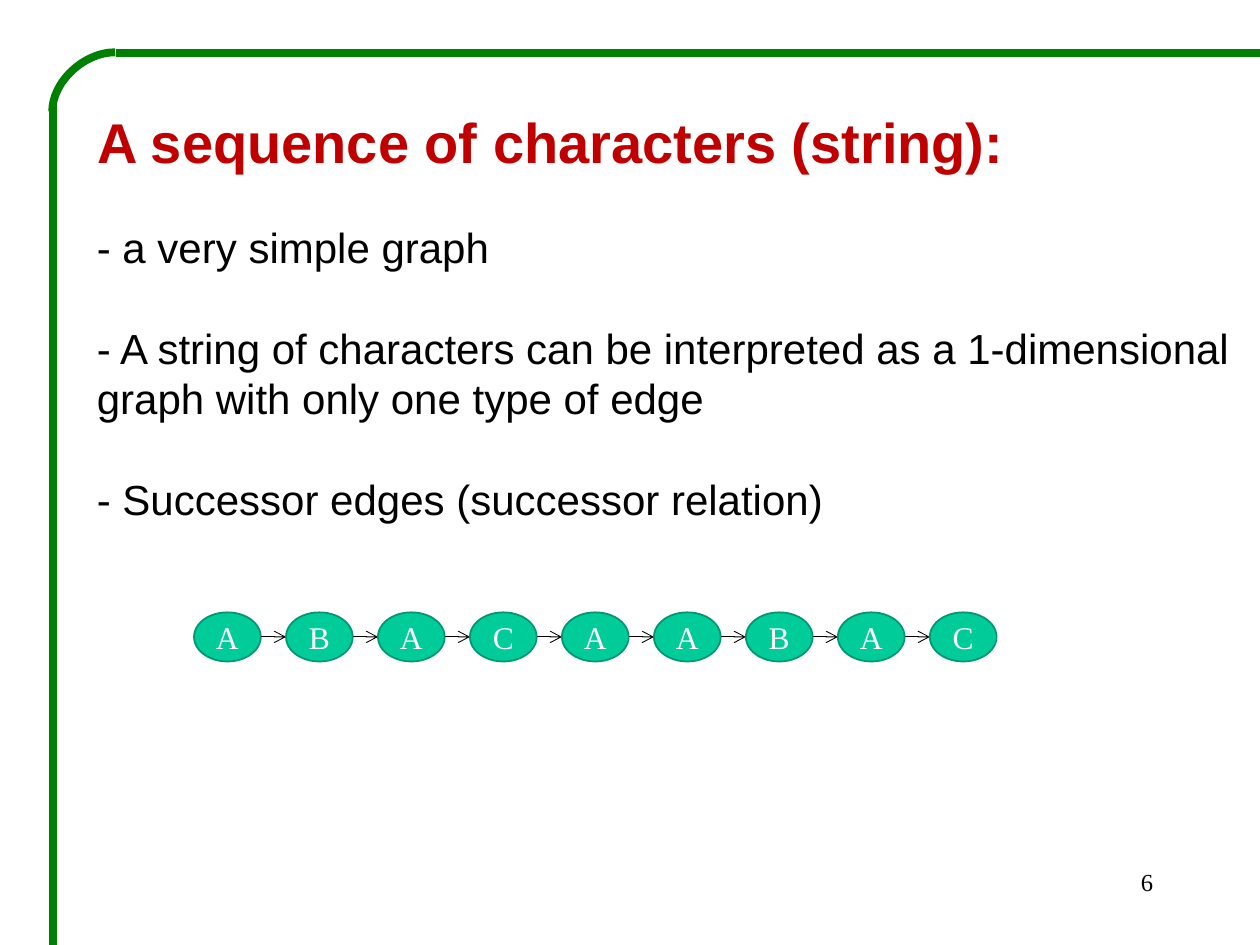
from lxml import etree
from pptx import Presentation
from pptx.dml.color import RGBColor
from pptx.enum.shapes import MSO_CONNECTOR, MSO_SHAPE
from pptx.enum.text import MSO_ANCHOR, PP_ALIGN
from pptx.oxml.ns import qn
from pptx.util import Inches, Pt

OVAL = MSO_SHAPE.OVAL
LINE, CURVE = MSO_CONNECTOR.STRAIGHT, MSO_CONNECTOR.CURVE
TOP, MID = MSO_ANCHOR.TOP, MSO_ANCHOR.MIDDLE
LEFT, CENTER, RIGHT = PP_ALIGN.LEFT, PP_ALIGN.CENTER, PP_ALIGN.RIGHT
SANS, SERIF = "Arial", "Times New Roman"
COLORS = {
    "title": "C00000",
    "text": "000000",
    "frame": "008000",
    "node": "00CC99",
    "rim": "009771",
    "label": "FFFFFF",
}
POINTS = [
    "- a very simple graph",
    "- A string of characters can be interpreted as a 1-dimensional "
    "graph with only one type of edge",
    "- Successor edges (successor relation)",
]
CHARS = "ABACAABAC"
START, STEP, NODE_W, NODE_H, NODE_Y = 1.54, 0.73, 0.53, 0.39, 4.86


def color(name):
    """Return the named colour."""
    return RGBColor.from_string(COLORS[name])


def style(para, font, size, name, align=LEFT, bold=False):
    """Format one paragraph."""
    para.alignment = align
    para.font.name, para.font.size = font, Pt(size)
    para.font.bold = bold
    para.font.color.rgb = color(name)


def add_title(slide, text):
    """Place and format the title placeholder."""
    title = slide.shapes.title
    title.left, title.top = Inches(0.67), Inches(0.8)
    title.width, title.height = Inches(9.29), Inches(0.75)
    frame = title.text_frame
    frame.text = text
    frame.vertical_anchor = TOP
    style(frame.paragraphs[0], SANS, 32, "title", bold=True)


def add_box(slide, x, y, w, h):
    """Add a wrapping text box and return its frame."""
    box = slide.shapes.add_textbox(Inches(x), Inches(y), Inches(w), Inches(h))
    box.text_frame.word_wrap = True
    return box.text_frame


def add_points(slide):
    """Add the statements under the title."""
    frame = add_box(slide, 0.67, 1.71, 9.29, 2.5)
    frame.text = "\n".join(POINTS)
    for i, para in enumerate(frame.paragraphs):
        style(para, SANS, 24, "text")
        para.line_spacing = Pt(28.8)
        para.space_before = Pt(28.8 if i else 0)


def add_line(slide, x1, y1, x2, y2, name, width, kind=LINE):
    """Add a connector without shadow."""
    line = slide.shapes.add_connector(
        kind, Inches(x1), Inches(y1), Inches(x2), Inches(y2))
    line.line.color.rgb = color(name)
    line.line.width = Pt(width)
    etree.SubElement(line._element.spPr, qn("a:effectLst"))
    return line


def add_frame(slide):
    """Add the two border lines and the curved corner."""
    add_line(slide, 10, 0.42, 0.92, 0.42, "frame", 4.5)
    add_line(slide, 0.42, 0.83, 0.42, 7.5, "frame", 4.5)
    bend = add_line(slide, 0.43, 0.4, 0.9, 0.9, "frame", 4.5, CURVE)
    props = bend._element.spPr
    props.find(qn("a:xfrm")).set("rot", str(270 * 60000))
    props.find(qn("a:prstGeom")).set("prst", "curvedConnector2")


def add_node(slide, x, char):
    """Add one character as an ellipse."""
    node = slide.shapes.add_shape(
        OVAL, Inches(x), Inches(NODE_Y), Inches(NODE_W), Inches(NODE_H))
    node.shadow.inherit = False
    node.fill.solid()
    node.fill.fore_color.rgb = color("node")
    node.line.color.rgb = color("rim")
    node.line.width = Pt(1)
    frame = node.text_frame
    frame.margin_left = frame.margin_right = 0
    frame.text = char
    frame.vertical_anchor = MID
    style(frame.paragraphs[0], SERIF, 18, "label", CENTER)


def add_edge(slide, x):
    """Add the arrow that leads to the next node."""
    y = NODE_Y + NODE_H / 2
    edge = add_line(slide, x + NODE_W, y, x + STEP, y, "text", 0.5)
    etree.SubElement(edge.line._get_or_add_ln(), qn("a:tailEnd"), type="arrow")


def add_number(slide, text):
    """Add the slide number."""
    frame = add_box(slide, 7.17, 6.83, 2.08, 0.5)
    frame.text = text
    style(frame.paragraphs[0], SERIF, 14, "text", RIGHT)


def main():
    """Build and save the slide."""
    deck = Presentation()
    deck.slide_width, deck.slide_height = Inches(10), Inches(7.5)
    slide = deck.slides.add_slide(deck.slide_layouts[5])
    add_frame(slide)
    add_title(slide, "A sequence of characters (string):")
    add_points(slide)
    for i, char in enumerate(CHARS):
        x = START + i * STEP
        add_node(slide, x, char)
        if i < len(CHARS) - 1:
            add_edge(slide, x)
    add_number(slide, "6")
    deck.save("out.pptx")


if __name__ == "__main__":
    main()
